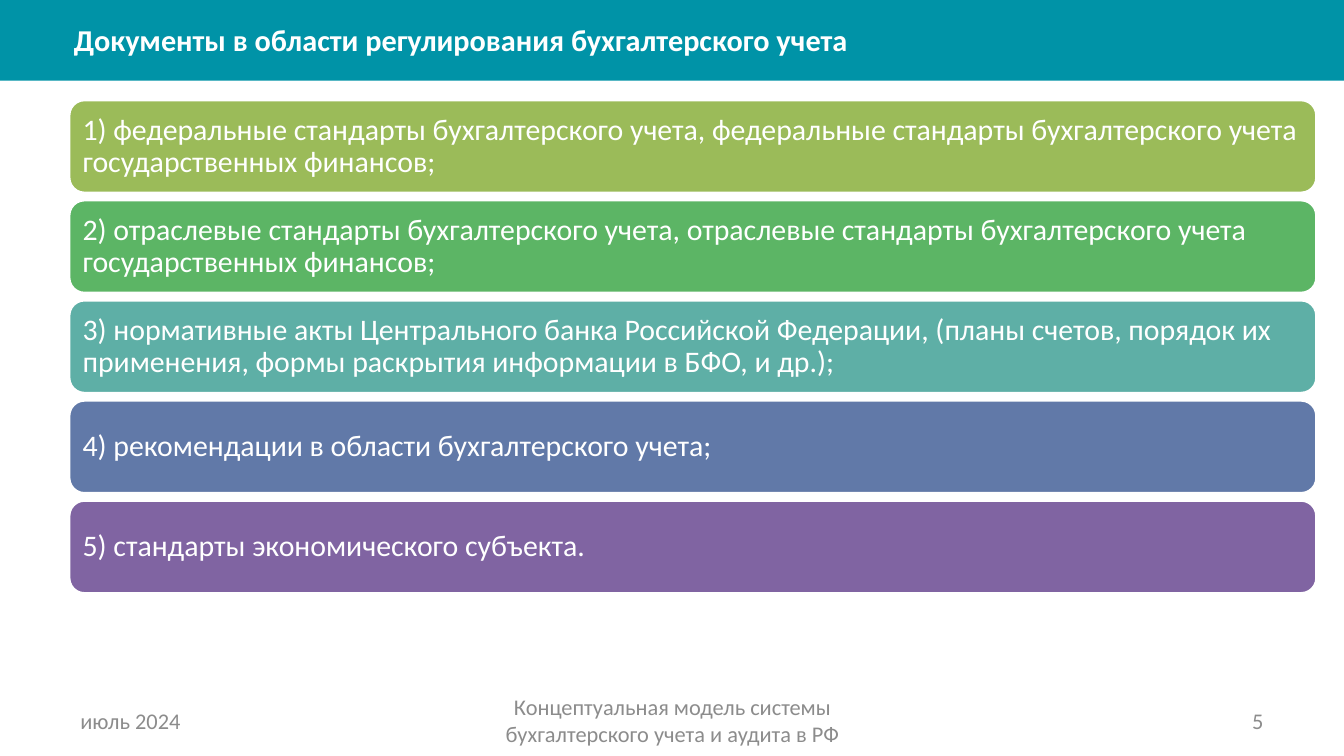
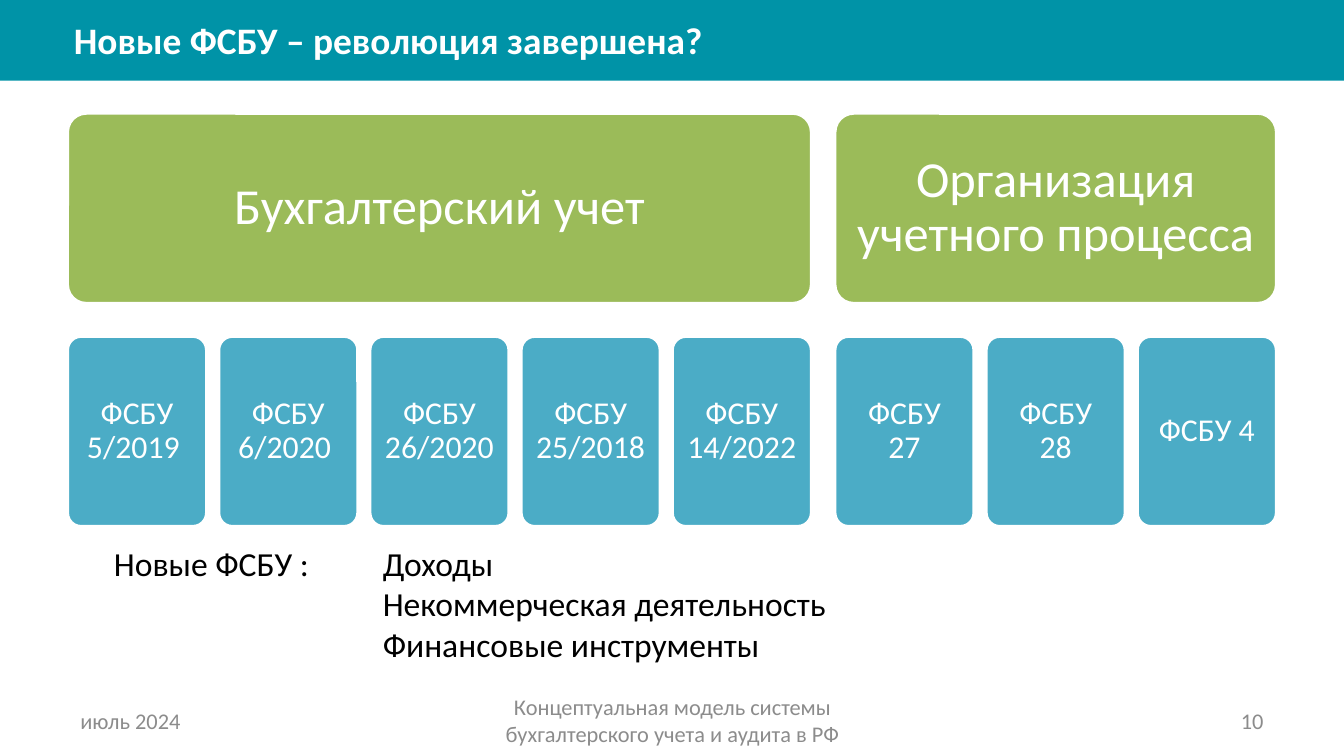
"""Builds two slides on Russian accounting regulation and the new federal standards."""
from pptx import Presentation
from pptx.dml.color import RGBColor
from pptx.enum.shapes import MSO_SHAPE
from pptx.enum.text import MSO_ANCHOR, MSO_AUTO_SIZE, PP_ALIGN
from pptx.util import Inches, Pt

FONT = "Calibri"
WHITE, BLACK, GRAY = "FFFFFF", "000000", "8C8C8C"
TEAL, GREEN, BLUE = "0093A7", "9BBB59", "4BACC6"


def set_text(shape, text, size, color, align=PP_ALIGN.LEFT, anchor=MSO_ANCHOR.MIDDLE,
             bold=False, spacing=1.0):
    frame = shape.text_frame
    frame.text = text
    frame.word_wrap = True
    frame.auto_size = MSO_AUTO_SIZE.NONE
    frame.vertical_anchor = anchor
    for paragraph in frame.paragraphs:
        paragraph.alignment = align
        paragraph.line_spacing = spacing
        for run in paragraph.runs:
            run.font.name = FONT
            run.font.size = Pt(size)
            run.font.bold = bold
            run.font.color.rgb = RGBColor.from_string(color)


def add_card(slide, box, fill, text, size, margin, align, radius):
    card = slide.shapes.add_shape(MSO_SHAPE.ROUNDED_RECTANGLE, *map(Inches, box))
    card.adjustments[0] = radius
    card.shadow.inherit = False
    card.fill.solid()
    card.fill.fore_color.rgb = RGBColor.from_string(fill)
    card.line.color.rgb = RGBColor.from_string(WHITE)
    card.line.width = Pt(2)
    frame = card.text_frame
    frame.margin_left = frame.margin_right = Inches(margin)
    frame.margin_top = frame.margin_bottom = Inches(margin)
    set_text(card, text, size, WHITE, align, spacing=0.9)


presentation = Presentation()
presentation.slide_width = Inches(10)
presentation.slide_height = Inches(10 * 9 / 16)

headings = [
    ("Документы в области регулирования бухгалтерского учета", 16.2, "5"),
    ("Новые ФСБУ – революция завершена?", 20, "10"),
]
for heading, size, number in headings:
    slide = presentation.slides.add_slide(presentation.slide_layouts[5])
    band = slide.shapes.add_shape(MSO_SHAPE.RECTANGLE, 0, 0, Inches(10), Inches(0.6))
    band.shadow.inherit = False
    band.fill.solid()
    band.fill.fore_color.rgb = RGBColor.from_string(TEAL)
    band.line.fill.background()

    title = slide.shapes.title
    title.element.addprevious(band.element)
    title.left, title.top = Inches(0.45), Inches(0.11)
    title.width, title.height = Inches(9), Inches(0.37)
    set_text(title, heading, size, WHITE, bold=True)

    footers = [
        (0.5, 2.33, "июль 2024", PP_ALIGN.LEFT),
        (3.42, 3.17, "Концептуальная модель системы бухгалтерского учета и аудита в РФ",
         PP_ALIGN.CENTER),
        (7.17, 2.33, number, PP_ALIGN.RIGHT),
    ]
    for left, width, text, align in footers:
        footer = slide.shapes.add_textbox(Inches(left), Inches(5.21), Inches(width), Inches(0.3))
        set_text(footer, text, 12, GRAY, align)

documents_slide, standards_slide = presentation.slides

documents = [
    ("1) федеральные стандарты бухгалтерского учета, федеральные стандарты "
     "бухгалтерского учета государственных финансов;", GREEN),
    ("2) отраслевые стандарты бухгалтерского учета, отраслевые стандарты "
     "бухгалтерского учета государственных финансов;", "5CB565"),
    ("3) нормативные акты Центрального банка Российской Федерации, (планы счетов, "
     "порядок их применения, формы раскрытия информации в БФО, и др.);", "5EAFA6"),
    ("4) рекомендации в области бухгалтерского учета;", "6179A8"),
    ("5) стандарты экономического субъекта.", "8064A2"),
]
row_step = (3.72 - 0.74) / (len(documents) - 1)
for index, (text, fill) in enumerate(documents):
    add_card(documents_slide, (0.51, 0.74 + index * row_step, 9.29, 0.7), fill, text,
             16, 0.07, PP_ALIGN.LEFT, 0.17)

groups = [
    ("Бухгалтерский учет", 0.5,
     ["ФСБУ 5/2019 ", "ФСБУ 6/2020 ", "ФСБУ 26/2020", "ФСБУ 25/2018 ", "ФСБУ 14/2022"]),
    ("Организация учетного процесса", 6.21, ["ФСБУ 27", "ФСБУ 28", "ФСБУ 4"]),
]
card_width, card_height = 1.04, 1.42
column_step = (5 - 0.5) / 4
for group, left, standards in groups:
    width = card_width + (len(standards) - 1) * column_step
    add_card(standards_slide, (left, 0.84, width, card_height), GREEN, group,
             27, 0.11, PP_ALIGN.CENTER, 0.1)
    for index, standard in enumerate(standards):
        box = (left + index * column_step, 2.5, card_width, card_height)
        add_card(standards_slide, box, BLUE, standard, 17, 0.08, PP_ALIGN.CENTER, 0.1)

upcoming = standards_slide.shapes.add_textbox(Inches(0.75), Inches(3.99), Inches(5.67), Inches(1.01))
set_text(upcoming, "Новые ФСБУ : \tДоходы\nНекоммерческая деятельность\nФинансовые инструменты",
         18, BLACK, anchor=MSO_ANCHOR.TOP)
upcoming.text_frame.auto_size = MSO_AUTO_SIZE.SHAPE_TO_FIT_TEXT
for index, paragraph in enumerate(upcoming.text_frame.paragraphs):
    properties = paragraph._p.get_or_add_pPr()
    properties.set("marL", str(Inches(2)))
    properties.set("indent", str(Inches(0 if index else -2)))

presentation.save("out.pptx")
